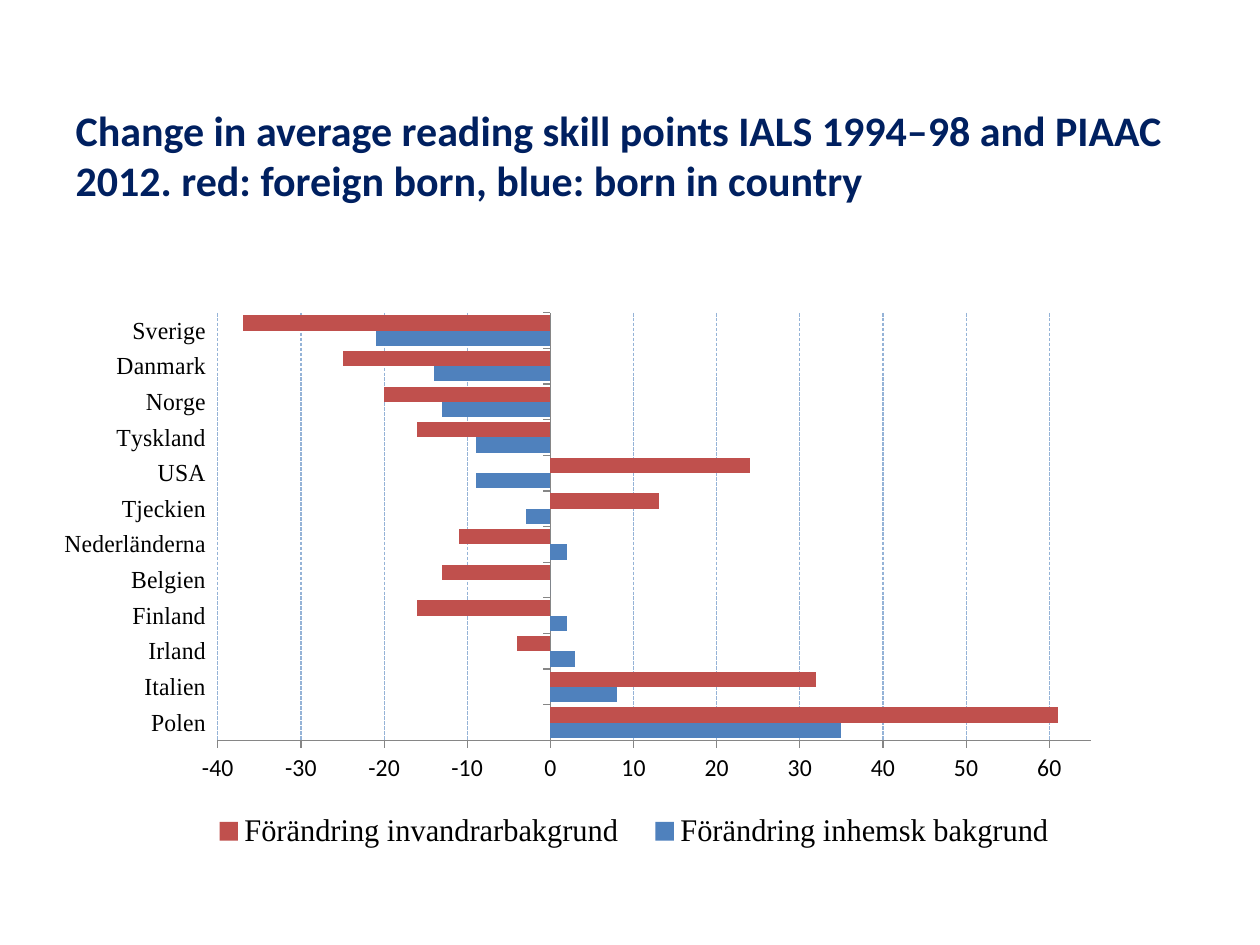
from lxml.etree import SubElement
from pptx import Presentation
from pptx.chart.data import CategoryChartData
from pptx.dml.color import RGBColor
from pptx.enum.chart import XL_CHART_TYPE, XL_LEGEND_POSITION, XL_TICK_LABEL_POSITION, XL_TICK_MARK
from pptx.enum.dml import MSO_LINE
from pptx.enum.text import MSO_ANCHOR, MSO_AUTO_SIZE, PP_ALIGN
from pptx.oxml.ns import qn
from pptx.util import Inches, Pt

TITLE = ("Change in average reading skill points IALS 1994–98 and PIAAC 2012. "
         "red: foreign born, blue: born in country")
ROWS = [
    ("Polen", 35, 61),
    ("Italien", 8, 32),
    ("Irland", 3, -4),
    ("Finland", 2, -16),
    ("Belgien", 0, -13),
    ("Nederländerna", 2, -11),
    ("Tjeckien", -3, 13),
    ("USA", -9, 24),
    ("Tyskland", -9, -16),
    ("Norge", -13, -20),
    ("Danmark", -14, -25),
    ("Sverige", -21, -37),
]
SERIES = [
    ("Förändring inhemsk bakgrund", "4F81BD"),
    ("Förändring invandrarbakgrund", "C0504D"),
]
PLOT = (0.115, 0.05, 0.86, 0.73)
LEGEND = (0.09, 0.89, 0.87, 0.09)


def color(code):
    return RGBColor.from_string(code)


def style(font, name, size, code="000000", bold=False):
    font.name, font.size, font.bold = name, Pt(size), bold
    font.color.rgb = color(code)


def place(item, box, inner=False):
    for old in item.findall(qn("c:layout")):
        item.remove(old)
    layout = SubElement(item, qn("c:layout"))
    manual = SubElement(layout, qn("c:manualLayout"))
    parts = [("layoutTarget", "inner")] if inner else []
    parts += [("xMode", "edge"), ("yMode", "edge"), *zip("xywh", box)]
    for tag, val in parts:
        SubElement(manual, qn("c:" + tag)).set("val", str(val))
    item.remove(layout)
    item.insert(0 if inner else 1, layout)


def add_title(slide):
    title = slide.shapes.title
    title.left, title.top = Inches(0.5), Inches(0.3)
    title.width, title.height = Inches(9), Inches(1.4)
    frame = title.text_frame
    frame.text = TITLE
    frame.word_wrap = True
    frame.auto_size = MSO_AUTO_SIZE.NONE
    frame.vertical_anchor = MSO_ANCHOR.MIDDLE
    frame.margin_top = Inches(0.51)
    para = frame.paragraphs[0]
    para.alignment = PP_ALIGN.LEFT
    style(para.runs[0].font, "Calibri", 24, "002060", True)


def add_bars(slide):
    names, *cols = zip(*ROWS)
    data = CategoryChartData()
    data.categories = names
    for (name, _), vals in zip(SERIES, cols):
        data.add_series(name, vals)
    chart = slide.shapes.add_chart(
        XL_CHART_TYPE.BAR_CLUSTERED, Inches(0.51), Inches(2.25),
        Inches(8.35), Inches(4.65), data).chart
    chart.has_title = False
    style(chart.font, "Calibri", 10)

    plot = chart.plots[0]
    plot.gap_width, plot.overlap = 33, 0
    plot.vary_by_categories = False
    for bar, (_, code) in zip(plot.series, SERIES):
        bar.invert_if_negative = False
        bar.format.fill.solid()
        bar.format.fill.fore_color.rgb = color(code)

    cat, val = chart.category_axis, chart.value_axis
    for axis, name in ((cat, "Times New Roman"), (val, "Calibri")):
        style(axis.tick_labels.font, name, 14)
        axis.major_tick_mark = XL_TICK_MARK.OUTSIDE
        axis.minor_tick_mark = XL_TICK_MARK.NONE
        axis.format.line.color.rgb = color("868686")
        axis.format.line.width = Pt(0.75)
    cat.tick_label_position = XL_TICK_LABEL_POSITION.LOW
    cat.has_major_gridlines = False
    val.minimum_scale, val.maximum_scale, val.major_unit = -40, 65, 10
    val.has_major_gridlines = True
    grid = val.major_gridlines.format.line
    grid.color.rgb = color("95B3D7")
    grid.width = Pt(0.75)
    grid.dash_style = MSO_LINE.SQUARE_DOT

    chart.has_legend = True
    key = chart.legend
    key.position = XL_LEGEND_POSITION.RIGHT
    key.include_in_layout = False
    style(key.font, "Times New Roman", 18)
    root = chart.element
    place(root.find(".//" + qn("c:plotArea")), PLOT, True)
    place(root.find(".//" + qn("c:legend")), LEGEND)


def main():
    deck = Presentation()
    deck.slide_width, deck.slide_height = Inches(10), Inches(7.5)
    slide = deck.slides.add_slide(deck.slide_layouts[5])
    add_title(slide)
    add_bars(slide)
    deck.save("out.pptx")


if __name__ == "__main__":
    main()
